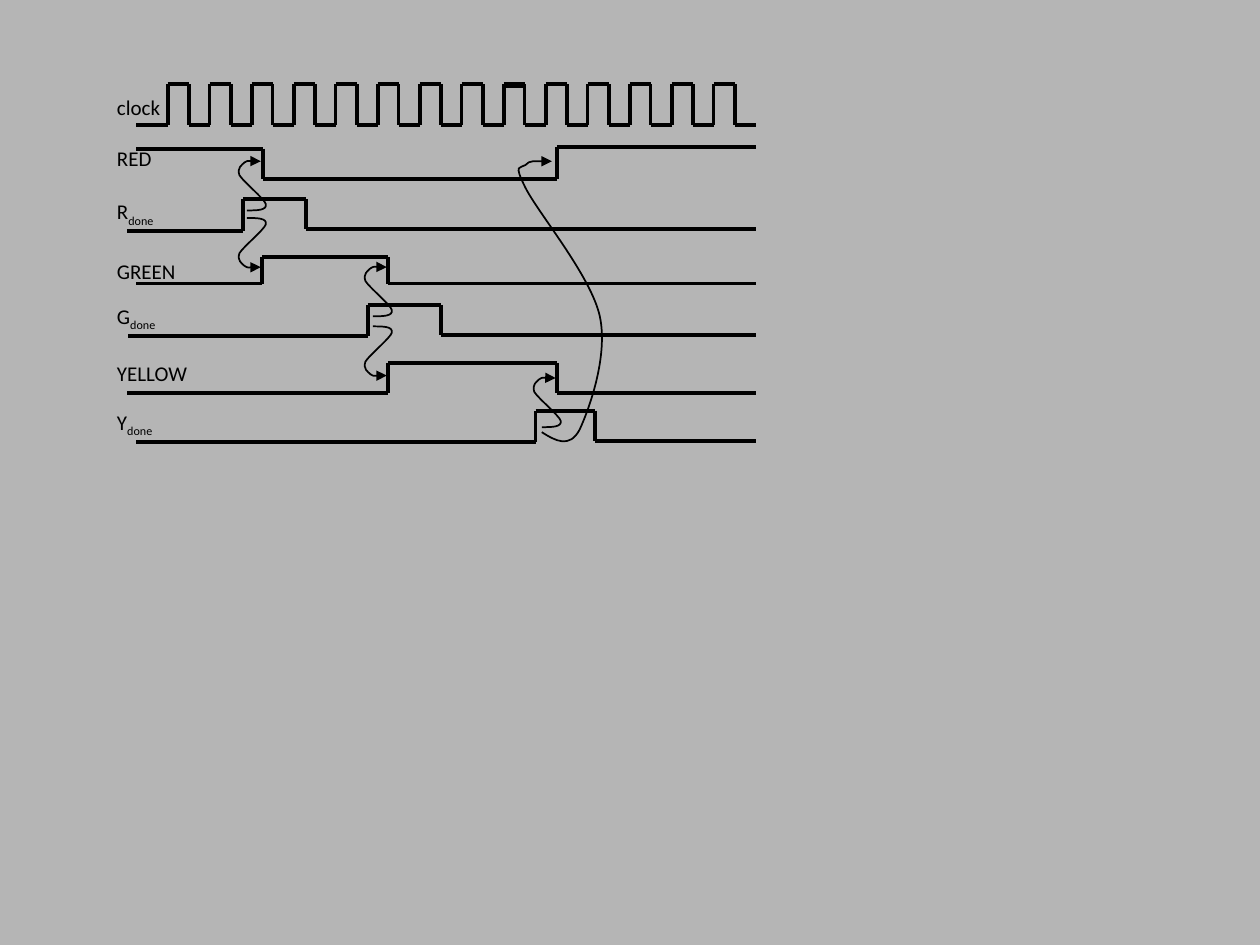
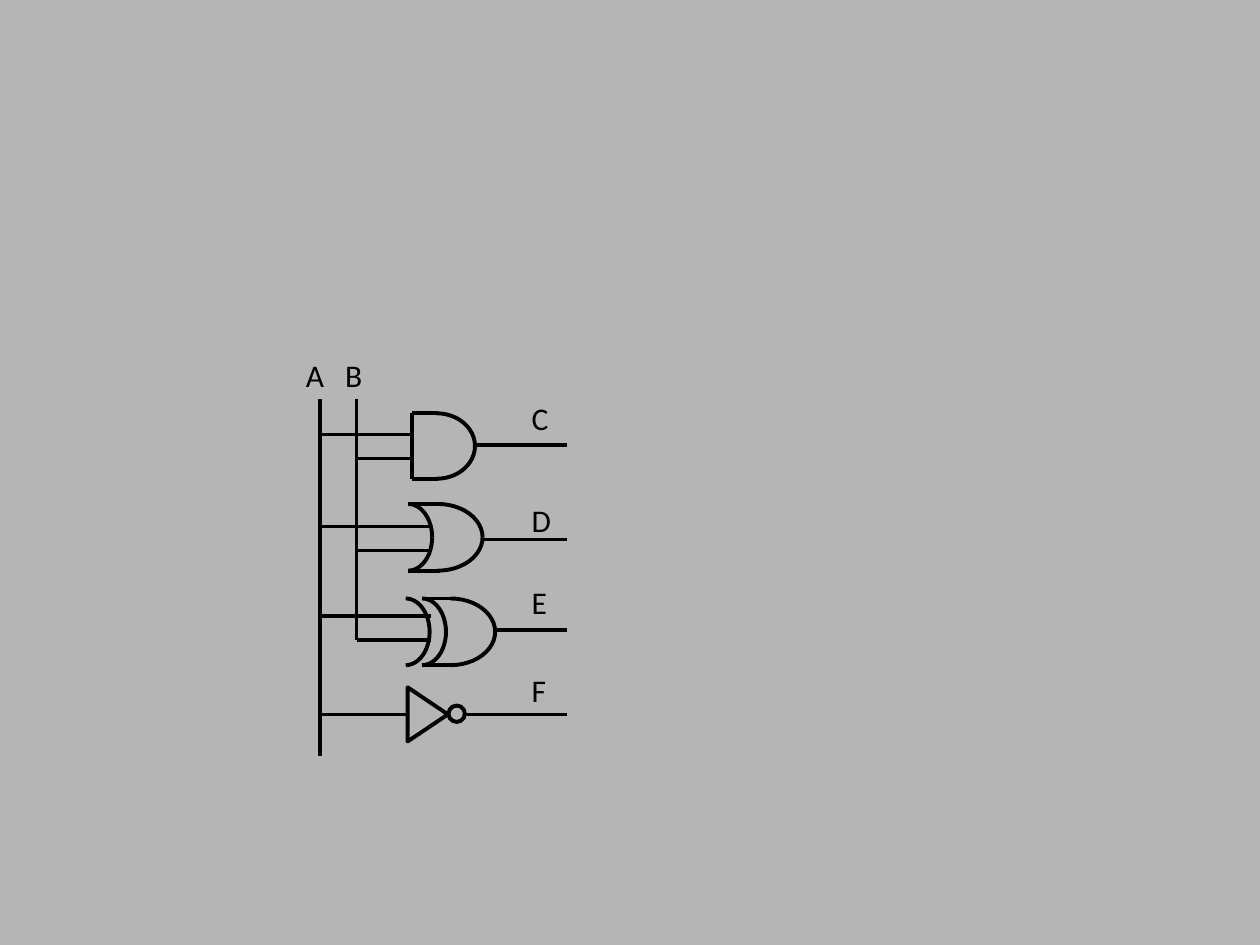
from itertools import pairwise

from lxml.etree import SubElement
from pptx import Presentation
from pptx.dml.color import RGBColor
from pptx.enum.shapes import MSO_CONNECTOR, MSO_SHAPE
from pptx.enum.text import MSO_AUTO_SIZE
from pptx.oxml.ns import qn
from pptx.util import Inches, Pt

BACKDROP = RGBColor(0xB5, 0xB5, 0xB5)
INK = RGBColor(0x00, 0x00, 0x00)
SIGNAL_TEXT = {"name": "Calibri", "size": Pt(12)}
GATE_TEXT = {"name": "Calibri", "size": Pt(18)}
TRACE, WIRE, ARROW = Pt(2.25), Pt(2), Pt(1)
SIGNALS_END = 5.17

CLOCK_EDGES = [0.5 + i / 6 for i in range(28)]
SIGNALS = [
    ("clock", "", 0.55, 0.03, 0.25, CLOCK_EDGES, [0.32, 0] * 14 + [0.32]),
    ("RED", "", 0.48, 0.44, 0.25, [1.26, 3.59], [0.51, 0.75, 0.5]),
    ("R", "done", 0.53, 0.86, 0.18, [1.1, 1.6], [1.16, 0.91, 1.15]),
    ("GREEN", "", 0.67, 1.33, 0.25, [1.25, 2.25], [1.58, 1.37, 1.58]),
    ("G", "done", 0.54, 1.69, 0.19, [2.09, 2.67], [2, 1.75, 1.99]),
    ("YELLOW", "", 0.79, 2.14, 0.18, [2.25, 3.59], [2.45, 2.21, 2.45]),
    ("Y", "done", 0.53, 2.53, 0.25, [3.42, 3.89], [2.84, 2.59, 2.83]),
]
MARKED_PULSE = ((3.17, 0.01), (3.34, 0.01))
HANDOFF_HEIGHT = 0.39
HANDOFF = [
    (0.07, 0.39), (0.15, 0.39), (0.23, 0.39), (0.22, 0.34),
    (0.21, 0.3), (0.04, 0.16), (0.01, 0.11),
    (-0.01, 0.05), (0.03, 0.03), (0.05, 0.01),
    (0.08, -0.01), (0.18, 0), (0.18, 0),
]
RESTART = [
    (0.18, 2.15), (0.29, 2.22), (0.4, 2.28), (0.48, 2.13),
    (0.55, 1.98), (0.71, 1.55), (0.64, 1.23),
    (0.57, 0.91), (0.15, 0.41), (0.05, 0.21),
    (-0.05, 0.01), (0.01, 0.06), (0.05, 0.03),
    (0.08, -0.01), (0.26, 0), (0.26, 0),
]
RISING_HANDOFFS = [(1.06, 0.61), (2.06, 1.45), (3.4, 2.33)]
FALLING_HANDOFFS = [(1.06, 1.06), (2.06, 1.92)]

RAIL_A, RAIL_B, RAIL_TOP = 0.21, 0.5, 0.39
OUTPUT_END = 2.17
OUTPUTS = [
    ("C", 0.34, 1.44, 0.75),
    ("D", 1.15, 1.5, 1.5),
    ("E", 1.8, 1.6, 2.22),
    ("F", 2.5, 1.36, 2.89),
]
INPUT_PAIRS = [(0.67, 0.94), (1.4, 1.08), (2.11, 1.09)]
INPUT_GAP = 0.19


def ink_line(line, width):
    line.color.rgb = INK
    line.width = width


def add_wire(shapes, start, end, width):
    ends = [Inches(value) for value in (*start, *end)]
    wire = shapes.add_connector(MSO_CONNECTOR.STRAIGHT, *ends)
    ink_line(wire.line, width)
    SubElement(wire._element.spPr, qn("a:effectLst"))


def outline(shape, width):
    shape.shadow.inherit = False
    shape.fill.background()
    ink_line(shape.line, width)
    return shape


def add_outline(shapes, preset, left, top, width, height):
    box = [Inches(value) for value in (left, top, width, height)]
    return outline(shapes.add_shape(preset, *box), TRACE)


def add_label(slide, left, top, width, height, text, formats, subscript="", wrap=False):
    box = [Inches(value) for value in (left, top, width, height)]
    frame = slide.shapes.add_textbox(*box).text_frame
    frame.word_wrap = wrap
    frame.auto_size = MSO_AUTO_SIZE.SHAPE_TO_FIT_TEXT
    for part in filter(None, (text, subscript)):
        run = frame.paragraphs[0].add_run()
        run.text = part
        for attribute, value in formats.items():
            setattr(run.font, attribute, value)
        run.font.color.rgb = INK
        if part == subscript:
            run._r.get_or_add_rPr().set("baseline", "-25000")
    return frame.paragraphs[0]


def add_curved_arrow(slide, left, top, controls):
    points = [(Inches(left + x), Inches(top + y)) for x, y in controls]
    builder = slide.shapes.build_freeform(*points[0])
    builder.add_line_segments(points[3::3], close=False)
    arrow = outline(builder.convert_to_shape(), ARROW)
    outline_path = next(arrow._element.iter(qn("a:path")))
    for segment in outline_path.findall(qn("a:lnTo")):
        outline_path.remove(segment)
    for first in range(1, len(points), 3):
        curve = SubElement(outline_path, qn("a:cubicBezTo"))
        for x, y in points[first:first + 3]:
            local = {"x": x - builder.shape_offset_x, "y": y - builder.shape_offset_y}
            SubElement(curve, qn("a:pt"), {axis: str(int(v)) for axis, v in local.items()})
    SubElement(arrow.line._get_or_add_ln(), qn("a:tailEnd"), type="triangle")


def add_waveform(slide, left, top, start, edges, levels):
    stops = [start, *edges, SIGNALS_END]
    corners = []
    for (begin, end), level in zip(pairwise(stops), levels):
        corners += [(left + begin, top + level), (left + end, top + level)]
    for corner_pair in pairwise(corners):
        add_wire(slide.shapes, *sorted(corner_pair), TRACE)


def timing_diagram(slide, left, top):
    for name, subscript, width, label_top, *wave in SIGNALS:
        add_waveform(slide, left, top, *wave)
        add_label(slide, left, top + label_top, width, 0.3, name, SIGNAL_TEXT, subscript)
    pulse_ends = [(left + x, top + y) for x, y in MARKED_PULSE]
    add_wire(slide.shapes, *pulse_ends, TRACE)
    falling = [(x, HANDOFF_HEIGHT - y) for x, y in HANDOFF]
    for offsets, controls in (
        (RISING_HANDOFFS, HANDOFF),
        (FALLING_HANDOFFS, falling),
        ([(3.29, 0.61)], RESTART),
    ):
        for x, y in offsets:
            add_curved_arrow(slide, left + x, top + y, controls)


def add_half_ellipse(shapes, left, top, width, height):
    lower = add_outline(shapes, MSO_SHAPE.ARC, left, top, width, height)
    lower._element.spPr.get_or_add_xfrm().set("flipV", "1")
    add_outline(shapes, MSO_SHAPE.ARC, left, top, width, height)


def add_gate(slide, left, top, flat, nose_left, nose, height, back_arcs=()):
    shapes = slide.shapes.add_group_shape().shapes
    for y in (top, top + height):
        add_wire(shapes, (left, y), (left + flat, y), TRACE)
    add_half_ellipse(shapes, left + nose_left, top, nose, height)
    for offset in back_arcs:
        add_half_ellipse(shapes, left + offset, top, 0.38, height)
    if not back_arcs:
        add_wire(shapes, (left, top), (left, top + height), TRACE)


def add_inverter(slide, left, top):
    shapes = slide.shapes.add_group_shape().shapes
    body = add_outline(shapes, MSO_SHAPE.ISOSCELES_TRIANGLE, left, top, 0.43, 0.32)
    body.rotation = 90
    add_outline(shapes, MSO_SHAPE.OVAL, left + 0.38, top + 0.09, 0.13, 0.13)


def gate_diagram(slide, left, top):
    add_gate(slide, left + 0.91, top + 1.22, 0.25, -0.12, 0.71, 0.53, [-0.19])
    add_gate(slide, left + 0.94, top + 0.5, 0.21, -0.11, 0.61, 0.52)
    add_gate(slide, left + 1.02, top + 1.97, 0.25, -0.13, 0.71, 0.53, [-0.19, -0.32])
    add_inverter(slide, left + 0.85, top + 2.73)

    wires = [
        (RAIL_A, RAIL_TOP, RAIL_A, 3.22),
        (RAIL_B, RAIL_TOP, RAIL_B, 2.3),
        (RAIL_A, 2.89, 0.91, 2.89),
    ]
    for y, end in INPUT_PAIRS:
        wires += [(RAIL_A, y, end, y), (RAIL_B, y + INPUT_GAP, end, y + INPUT_GAP)]
    wires += [(start, y, OUTPUT_END, y) for _, _, start, y in OUTPUTS]
    for x1, y1, x2, y2 in wires:
        add_wire(slide.shapes, (left + x1, top + y1), (left + x2, top + y2), WIRE)

    rails = add_label(slide, left, top, 0.75, 0.4, "A\tB", GATE_TEXT, wrap=True)
    stops = SubElement(rails._p.get_or_add_pPr(), qn("a:tabLst"))
    SubElement(stops, qn("a:tab"), pos=str(Inches(0.31)), algn="l")
    for name, y, _, _ in OUTPUTS:
        add_label(slide, left + 1.79, top + y, 0.38, 0.4, name, GATE_TEXT, wrap=True)


def main():
    deck = Presentation()
    deck.slide_width, deck.slide_height = Inches(10), Inches(7.5)
    for draw, left, top in ((timing_diagram, 0.83, 0.67), (gate_diagram, 2.33, 2.78)):
        slide = deck.slides.add_slide(deck.slide_layouts[6])
        slide.background.fill.solid()
        slide.background.fill.fore_color.rgb = BACKDROP
        draw(slide, left, top)
    deck.save("out.pptx")


if __name__ == "__main__":
    main()
